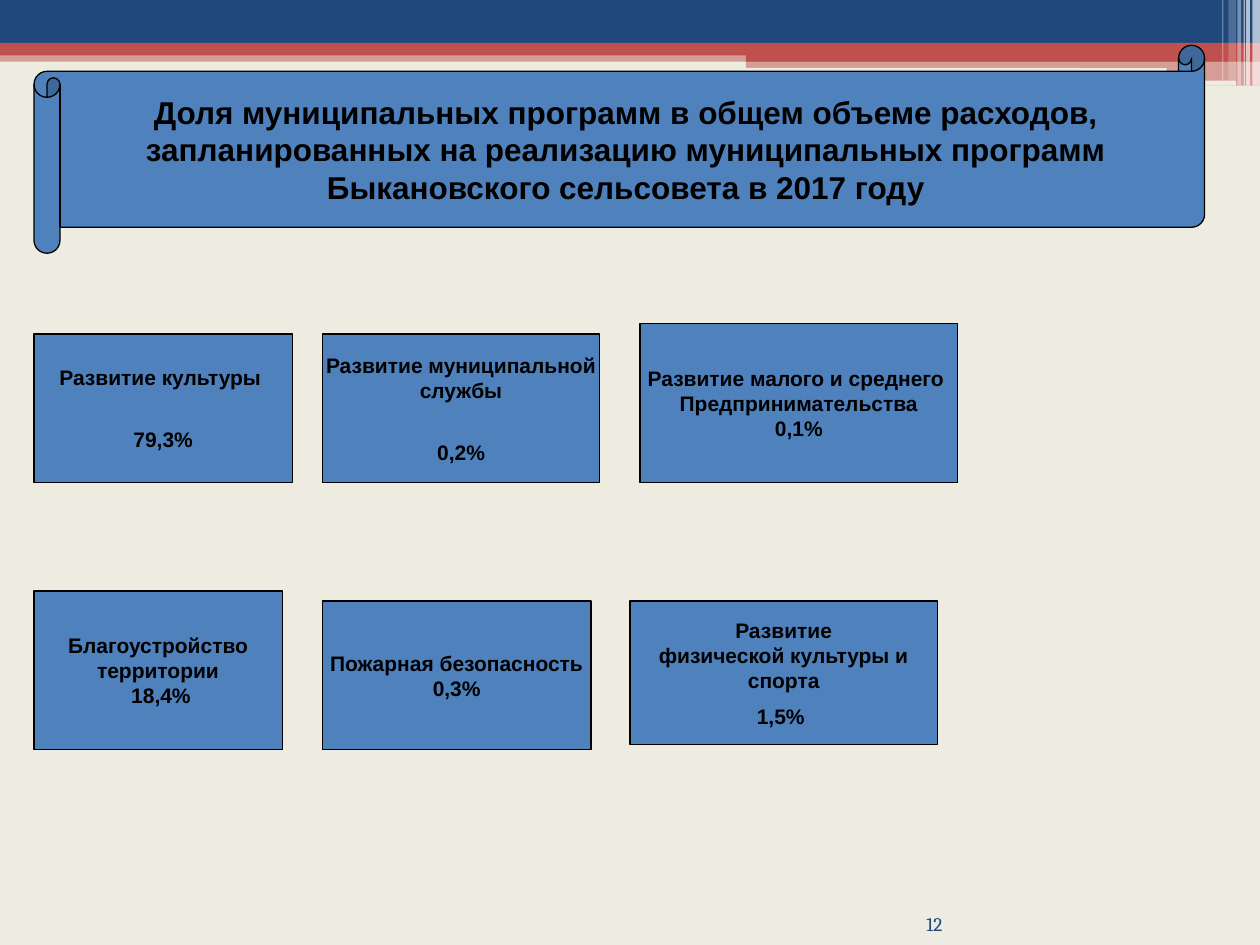
from dataclasses import dataclass
from typing import Optional

from lxml import etree
from pptx import Presentation
from pptx import util as u
from pptx.dml.color import RGBColor
from pptx.enum import shapes, text
from pptx.oxml import ns

NAVY = RGBColor(0x1F, 0x49, 0x7D)
RED = RGBColor(0xC0, 0x50, 0x4D)
BLUE = RGBColor(0x4F, 0x81, 0xBD)
CREAM = RGBColor(0xEE, 0xEC, 0xE1)
WHITE = RGBColor(0xFF, 0xFF, 0xFF)
BLACK = RGBColor(0, 0, 0)

PAGE_WIDTH, PAGE_HEIGHT = u.Inches(10), u.Inches(7.5)
COLUMNS, ROWS = 100, 75
RECTANGLE = shapes.MSO_SHAPE.RECTANGLE
ROUNDED = shapes.MSO_SHAPE.ROUNDED_RECTANGLE
PROCESS = shapes.MSO_SHAPE.FLOWCHART_PROCESS
SCROLL = shapes.MSO_SHAPE.HORIZONTAL_SCROLL


@dataclass(frozen=True)
class Frame:
    column: float
    row: float
    columns: float
    rows: float

    def place(self) -> tuple[int, int, int, int]:
        across, down = PAGE_WIDTH / COLUMNS, PAGE_HEIGHT / ROWS
        return (round(self.column * across), round(self.row * down),
                round(self.columns * across), round(self.rows * down))


@dataclass(frozen=True)
class Band:
    frame: Frame
    colour: RGBColor
    opacity: int = 100
    kind: int = RECTANGLE


@dataclass(frozen=True)
class Panel:
    frame: Frame
    lines: tuple[str, ...]
    last_gap: float = 0
    kind: int = PROCESS
    size: float = 12


BANDS = (
    Band(Frame(0, 4, 100, 0.9), RED, 50),
    Band(Frame(0, 0, 100, 3.4), NAVY),
    Band(Frame(0, 3.4, 100, 1), RED),
    Band(Frame(59.2, 3.9, 40.8, 1), RED),
    Band(Frame(59.2, 4.8, 40.8, 2), RED, 50),
    Band(Frame(59.1, 5.4, 33.5, 0.3), CREAM, kind=ROUNDED),
    Band(Frame(80.6, 6.4, 17.5, 0.4), CREAM, kind=ROUNDED),
    Band(Frame(99.4, 0, 0.6, 6.8), WHITE, 65),
    Band(Frame(98.9, 0, 0.3, 6.8), WHITE, 65),
    Band(Frame(98.7, 0, 0.1, 6.8), WHITE, 60),
    Band(Frame(98.2, 0, 0.3, 6.8), WHITE, 40),
    Band(Frame(97.5, 0, 0.6, 6.4), WHITE, 20),
    Band(Frame(97, 0, 0.1, 6.4), WHITE, 30),
)

PANELS = (
    Panel(Frame(2.7, 26.5, 20.5, 11.8), ("Развитие культуры ", "79,3%"), 21),
    Panel(Frame(25.6, 26.5, 22, 11.8),
          ("Развитие муниципальной", "службы", "0,2%"), 21),
    Panel(Frame(50.8, 25.7, 25.2, 12.6),
          ("Развитие малого и среднего ", "Предпринимательства", "0,1%")),
    Panel(Frame(2.7, 46.9, 19.7, 12.6),
          ("Благоустройство", " территории ", " 18,4%")),
    Panel(Frame(25.6, 47.7, 21.3, 11.8), ("Пожарная безопасность", "0,3%")),
    Panel(Frame(50, 47.7, 24.4, 11.4),
          ("Развитие", " физической культуры и ", "спорта", "1,5% "), 6),
    Panel(Frame(2.7, 3.6, 92.9, 16.5),
          ("Доля муниципальных программ в общем объеме расходов,",
           "запланированных на реализацию муниципальных программ",
           "Быкановского сельсовета в 2017 году"), kind=SCROLL, size=18),
)


def apply(target, formats: dict) -> None:
    for name, value in formats.items():
        setattr(target, name, value)


def add_filled(page, kind: int, frame: Frame, colour: RGBColor):
    shape = page.shapes.add_shape(kind, *frame.place())
    shape.shadow.inherit = False
    shape.fill.solid()
    shape.fill.fore_color.rgb = colour
    return shape


def draw_band(page, band: Band) -> None:
    shape = add_filled(page, band.kind, band.frame, band.colour)
    shape.line.fill.background()
    if band.opacity < 100:
        colour = shape.fill._xPr.find(".//" + ns.qn("a:srgbClr"))
        etree.SubElement(colour, ns.qn("a:alpha"), val=str(band.opacity * 1000))


def write_line(para, words: str, align: int, colour: RGBColor,
               formats: dict, gap: Optional[float] = None) -> None:
    para.alignment = align
    if gap:
        para.space_before = u.Pt(gap)
    span = para.add_run()
    span.text = words
    apply(span.font, formats)
    span.font.color.rgb = colour


def draw_panel(page, panel: Panel) -> None:
    shape = add_filled(page, panel.kind, panel.frame, BLUE)
    shape.line.color.rgb = BLACK
    shape.line.width = u.Pt(0.75)
    body = shape.text_frame
    apply(body, {"word_wrap": False, "vertical_anchor": text.MSO_ANCHOR.MIDDLE})
    formats = {"name": "Arial", "size": u.Pt(panel.size), "bold": True}
    last = len(panel.lines) - 1
    for index, words in enumerate(panel.lines):
        para = body.add_paragraph() if index else body.paragraphs[0]
        write_line(para, words, text.PP_ALIGN.CENTER, BLACK, formats,
                   panel.last_gap if index == last else None)


def draw_page_number(page, frame: Frame, number: str) -> None:
    box = page.shapes.add_textbox(*frame.place())
    apply(box.text_frame, {
        "word_wrap": True, "vertical_anchor": text.MSO_ANCHOR.BOTTOM,
        "margin_left": 0, "margin_right": 0, "margin_top": 0, "margin_bottom": 0,
    })
    write_line(box.text_frame.paragraphs[0], number, text.PP_ALIGN.RIGHT, NAVY,
               {"name": "Cambria", "size": u.Pt(11)})


def main() -> None:
    deck = Presentation()
    apply(deck, {"slide_width": PAGE_WIDTH, "slide_height": PAGE_HEIGHT})
    page = deck.slides.add_slide(deck.slide_layouts[6])
    page.background.fill.solid()
    page.background.fill.fore_color.rgb = CREAM
    for band in BANDS:
        draw_band(page, band)
    draw_page_number(page, Frame(68.4, 71.7, 6.4, 2.5), "12")
    for panel in PANELS:
        draw_panel(page, panel)
    deck.save("out.pptx")


if __name__ == "__main__":
    main()
